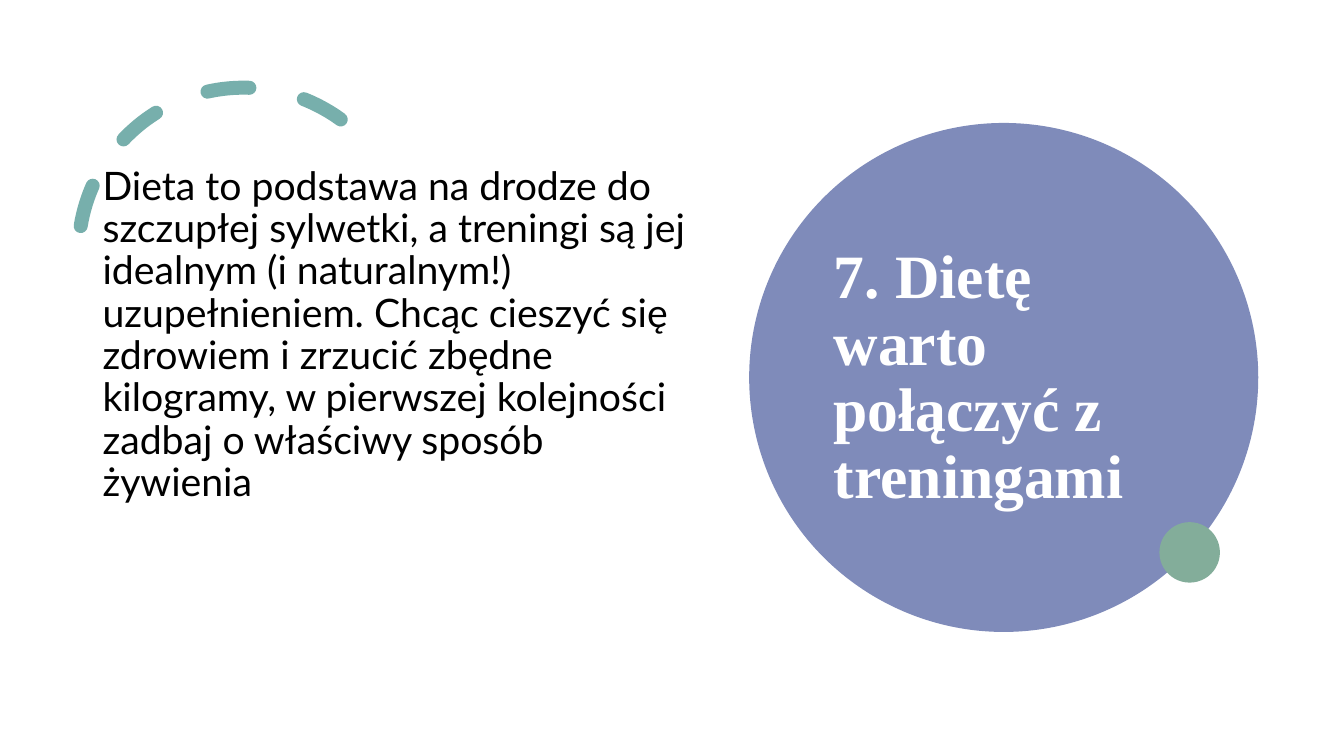
from dataclasses import dataclass

from lxml import etree
from pptx import Presentation, util as u
from pptx.dml.color import RGBColor
from pptx.enum import dml, shapes, text


@dataclass(frozen=True)
class Theme:
    white: str = "FFFFFF"
    black: str = "000000"
    teal: str = "77AFAC"
    blue: str = "7F8BBA"
    green: str = "83AD9A"
    head_font: str = "Times New Roman"
    body_font: str = "Lato"
    head_size: int = 44
    body_size: int = 28
    arc_width: int = 10
    leading: float = 0.9


class Page:
    """Places elements by percent of the slide's width and height."""

    def __init__(self, deck, theme):
        self.deck, self.theme = deck, theme
        self.slide = deck.slides.add_slide(deck.slide_layouts[6])

    def wide(self, share):
        return round(self.deck.slide_width * share / 100)

    def high(self, share):
        return round(self.deck.slide_height * share / 100)

    def round(self, kind, x, y, size):
        side = self.wide(size)
        item = self.slide.shapes.add_shape(
            kind, self.wide(x), self.high(y), side, side)
        item.shadow.inherit = False
        return item

    def disc(self, x, y, size, color):
        item = self.round(shapes.MSO_SHAPE.OVAL, x, y, size)
        item.fill.solid()
        item.fill.fore_color.rgb = RGBColor.from_string(color)
        item.line.fill.background()

    def arc(self, x, y, size, ends, turn, color):
        item = self.round(shapes.MSO_SHAPE.ARC, x, y, size)
        item.adjustments[0], item.adjustments[1] = ends
        item.rotation = turn
        item.fill.background()
        item.line.color.rgb = RGBColor.from_string(color)
        item.line.width = u.Pt(self.theme.arc_width)
        item.line.dash_style = dml.MSO_LINE.DASH
        # Mirror the arc and give its dashes round ends
        props = item.element.spPr
        props.xfrm.set("flipH", "1")
        props.find("{*}ln").set("cap", "rnd")

    def words(self, box, runs, font, size, color, bold=False,
              anchor=text.MSO_ANCHOR.TOP, before=0):
        x, y, w, h = box
        item = self.slide.shapes.add_textbox(
            self.wide(x), self.high(y), self.wide(w), self.high(h))
        frame = item.text_frame
        frame.word_wrap = True
        frame.vertical_anchor = anchor
        para = frame.paragraphs[0]
        para.line_spacing = self.theme.leading
        para.space_before = u.Pt(before)
        for words in runs:
            run = para.add_run()
            run.text = words
            run.font.name = font
            run.font.size = u.Pt(size)
            run.font.bold = bold
            run.font.color.rgb = RGBColor.from_string(color)


def main():
    deck = Presentation()
    deck.slide_width, deck.slide_height = u.Inches(13.33), u.Inches(7.5)
    theme = Theme()
    page = Page(deck, theme)

    # Dashed arc and large disc
    page.arc(5.85, 11.6, 24.53, (158.17, 17.81), 29.8, theme.teal)
    page.disc(55.74, 16.27, 37.88, theme.blue)

    # Title on the disc
    page.words((61.29, 20.4, 26.56, 59.33),
               ["7. Dietę warto połączyć z treningami"],
               theme.head_font, theme.head_size, theme.white,
               bold=True, anchor=text.MSO_ANCHOR.MIDDLE)

    # Body text
    page.words((6.9, 21.33, 45.39, 57.33),
               ["Dieta to podstawa na drodze do szczupłej sylwetki, "
                "a treningi są jej idealnym (i naturalnym!) uzupełnieniem. "
                "Chcąc cieszyć się zdrowiem i zrzucić zbędne kilogramy, "
                "w pierwszej kolejności zadbaj o właściwy sposób żywienia"],
               theme.body_font, theme.body_size, theme.black, before=10)

    # Small accent disc
    page.disc(86.27, 69.07, 4.5, theme.green)

    deck.save("out.pptx")


if __name__ == "__main__":
    main()
